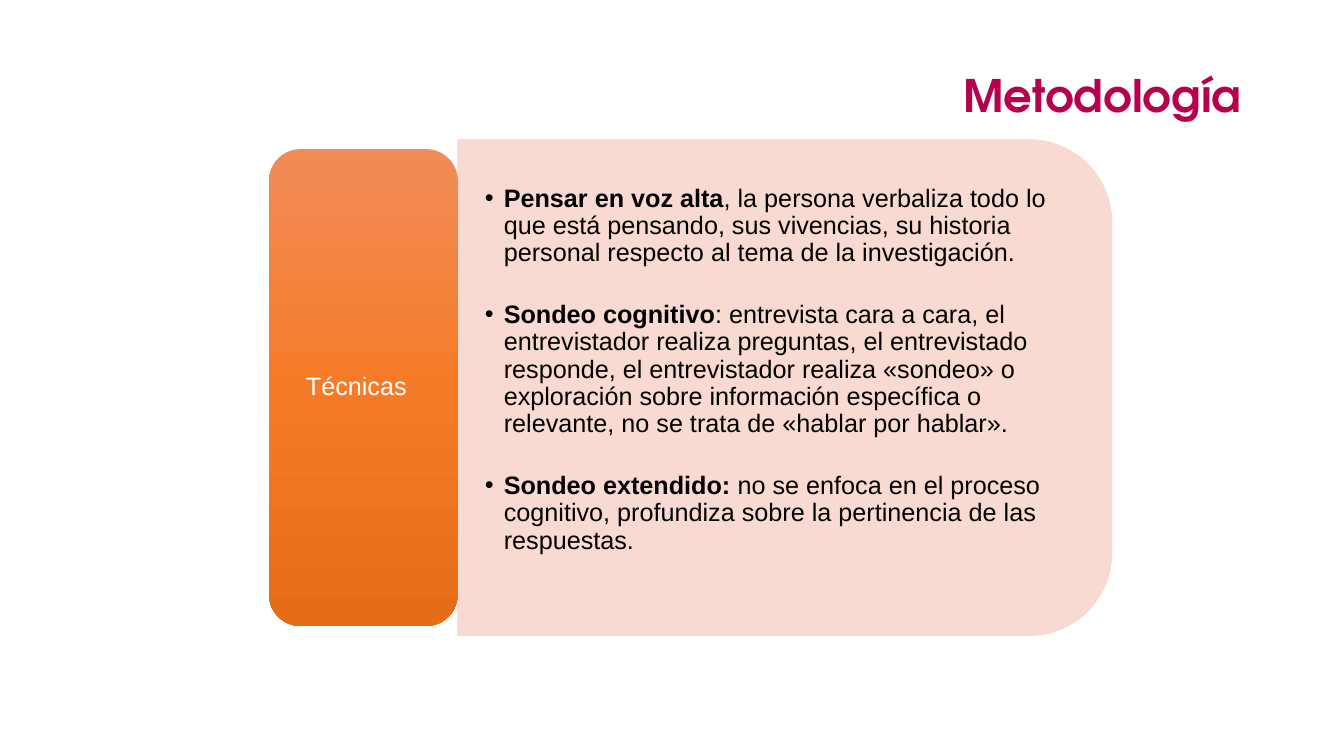
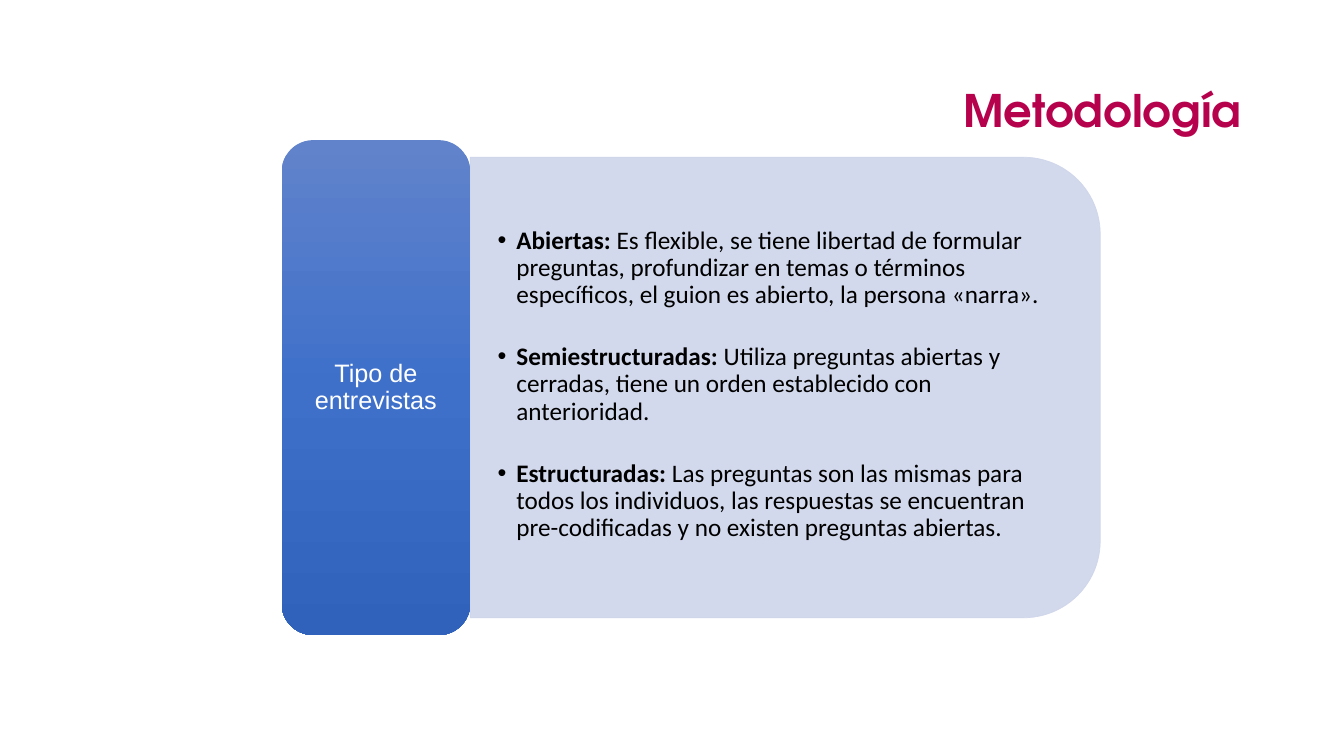
from copy import deepcopy

from lxml import etree
from pptx import Presentation
from pptx.dml.color import RGBColor
from pptx.enum import shapes, text
from pptx.oxml import ns
from pptx.util import Pt

COLORS = {"title": "B6014C", "body": "000000", "label": "FFFFFF"}
TITLE = "Metodología"
CENTER_Y = 276.84
LABEL_WIDTH = 134.64
BODY_TRIM = (17, 34)
PARAGRAPH_GAP = 24.8
BULLET_INDENT = 13.5

SLIDES = [
    {
        "title_top": 18,
        "label": "Técnicas",
        "label_left": 192.24,
        "label_height": 340.6,
        "label_margins": (5, 3, 15, 3),
        "gradient": ("F18C57", "F67B28", "E56C19"),
        "panel": "F8D7CE",
        "panel_size": (467.3, 354.2),
        "font": "Arial",
        "body_margins": (19.5, 10, 19.5, 35),
        "items": [
            ("Pensar en voz alta", ", la persona verbaliza todo lo que está pensando, sus vivencias, "
             "su historia personal respecto al tema de la investigación."),
            ("Sondeo cognitivo", ": entrevista cara a cara, el entrevistador realiza preguntas, "
             "el entrevistado responde, el entrevistador realiza «sondeo» o exploración sobre "
             "información específica o relevante, no se trata de «hablar por hablar»."),
            ("Sondeo extendido:", " no se enfoca en el proceso cognitivo, profundiza sobre la "
             "pertinencia de las respuestas."),
        ],
    },
    {
        "title_top": 28.8,
        "label": "Tipo de entrevistas",
        "label_left": 201.24,
        "label_height": 353.5,
        "label_margins": (5, 3, 5, 3),
        "gradient": ("6183CB", "3E70CA", "3062BB"),
        "panel": "CFD5EA",
        "panel_size": (450, 329),
        "font": "Calibri",
        "body_margins": (19.5, 10, 19.5, 14),
        "items": [
            ("Abiertas:", " Es flexible, se tiene libertad de formular preguntas, profundizar en "
             "temas o términos específicos, el guion es abierto, la persona «narra»."),
            ("Semiestructuradas:", " Utiliza preguntas abiertas y cerradas, tiene un orden "
             "establecido con anterioridad."),
            ("Estructuradas:", " Las preguntas son las mismas para todos los individuos, las "
             "respuestas se encuentran pre-codificadas y no existen preguntas abiertas."),
        ],
    },
]


def set_format(target, **values):
    for name, value in values.items():
        setattr(target, name, value)


def set_frame(shape, margins):
    left, top, right, bottom = map(Pt, margins)
    set_format(shape.text_frame, word_wrap=True, auto_size=text.MSO_AUTO_SIZE.NONE,
               vertical_anchor=text.MSO_ANCHOR.MIDDLE,
               margin_left=left, margin_top=top, margin_right=right, margin_bottom=bottom)
    return shape.text_frame


def add_run(paragraph, words, font, size, color, bold=False):
    run = paragraph.add_run()
    run.text = words
    set_format(run.font, name=font, size=Pt(size), bold=bold)
    run.font.color.rgb = RGBColor.from_string(COLORS[color])


def add_title(slide, top):
    box = slide.shapes.add_textbox(Pt(66), Pt(top), Pt(828), Pt(104.4))
    paragraph = set_frame(box, (7.2, 3.6, 7.2, 3.6)).paragraphs[0]
    set_format(paragraph, alignment=text.PP_ALIGN.RIGHT, line_spacing=0.9)
    add_run(paragraph, TITLE, "TeX Gyre Adventor", 32, "title", True)


def add_panel(slide, left, size, color):
    width, height = size
    shape = slide.shapes.add_shape(
        shapes.MSO_SHAPE.ROUND_2_SAME_RECTANGLE,
        Pt(left + (width - height) / 2), Pt(CENTER_Y - width / 2), Pt(height), Pt(width))
    shape.rotation = 90
    shape.shadow.inherit = False
    shape.line.width = Pt(0.5)
    for fill in (shape.fill, shape.line.fill):
        fill.solid()
        fill.fore_color.rgb = RGBColor.from_string(color)
    for element in shape._element.spPr.iter(ns.qn("a:srgbClr")):
        etree.SubElement(element, ns.qn("a:alpha"), val="90000")


def add_label(slide, data):
    height = data["label_height"]
    shape = slide.shapes.add_shape(
        shapes.MSO_SHAPE.ROUNDED_RECTANGLE,
        Pt(data["label_left"]), Pt(CENTER_Y - height / 2), Pt(LABEL_WIDTH), Pt(height))
    shape.shadow.inherit = False
    shape.line.fill.background()
    shape.fill.gradient()
    shape.fill.gradient_angle = 270
    stop_list = next(shape._element.spPr.iter(ns.qn("a:gsLst")))
    stop_list.append(deepcopy(stop_list[0]))
    for index, (stop, color) in enumerate(zip(shape.fill.gradient_stops, data["gradient"])):
        stop.position = index / 2
        stop.color.rgb = RGBColor.from_string(color)
    paragraph = set_frame(shape, data["label_margins"]).paragraphs[0]
    set_format(paragraph, alignment=text.PP_ALIGN.CENTER, line_spacing=0.9)
    add_run(paragraph, data["label"], "Arial", 18, "label")


def add_body(slide, left, data):
    width, height = (side - trim for side, trim in zip(data["panel_size"], BODY_TRIM))
    box = slide.shapes.add_textbox(Pt(left), Pt(CENTER_Y - height / 2), Pt(width), Pt(height))
    frame = set_frame(box, data["body_margins"])
    for index, (term, explanation) in enumerate(data["items"]):
        paragraph = frame.add_paragraph() if index else frame.paragraphs[0]
        properties = paragraph._p.get_or_add_pPr()
        properties.set("marL", str(Pt(BULLET_INDENT)))
        properties.set("indent", str(-Pt(BULLET_INDENT)))
        etree.SubElement(properties, ns.qn("a:buFont"), typeface="Arial")
        etree.SubElement(properties, ns.qn("a:buChar"), char="•")
        set_format(paragraph, line_spacing=0.9, space_before=Pt(PARAGRAPH_GAP if index else 0))
        add_run(paragraph, term, data["font"], 18, "body", True)
        add_run(paragraph, explanation, data["font"], 18, "body")


def main():
    presentation = Presentation()
    set_format(presentation, slide_width=Pt(960), slide_height=Pt(540))
    for data in SLIDES:
        slide = presentation.slides.add_slide(presentation.slide_layouts[6])
        panel_left = data["label_left"] + LABEL_WIDTH
        add_panel(slide, panel_left, data["panel_size"], data["panel"])
        add_body(slide, panel_left, data)
        add_label(slide, data)
        add_title(slide, data["title_top"])
    presentation.save("out.pptx")


if __name__ == "__main__":
    main()
